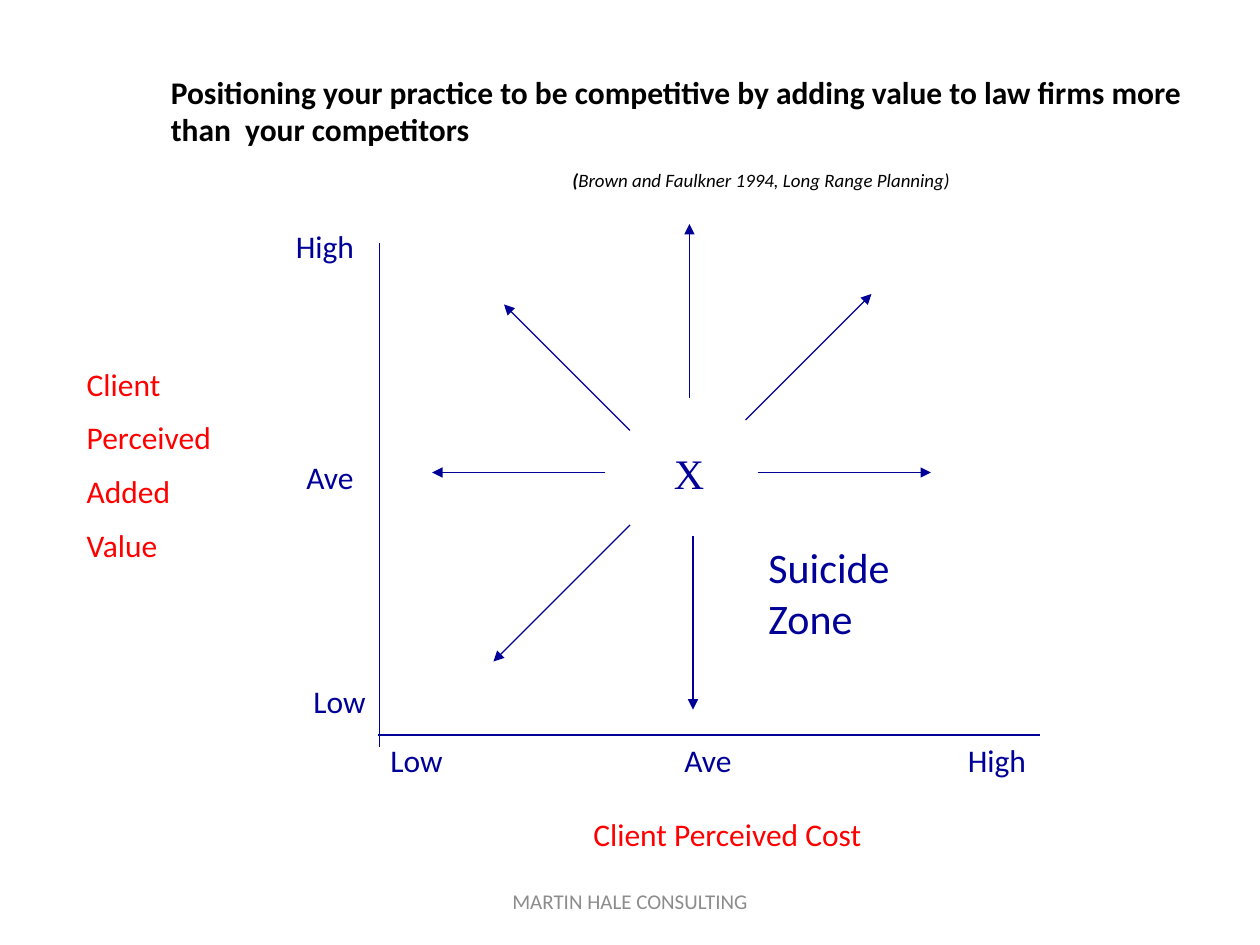
import pptx
import pptx.util
import pptx.dml.color
import pptx.enum.shapes
import pptx.enum.text
import pptx.oxml.ns
import lxml.etree

Pt = pptx.util.Pt
RGB = pptx.dml.color.RGBColor
NAVY = RGB(0x00, 0x00, 0x99)
RED = RGB(0xFF, 0x00, 0x00)
BLACK = RGB(0x00, 0x00, 0x00)
GRAY = RGB(0x8C, 0x8C, 0x8C)

AXES = [(217, 139, 217, 427), (216, 420, 594, 420)]
ARROWS = [
    (396, 306, 396, 405.5),
    (433, 270, 532, 270),
    (394, 227.5, 394, 128),
    (346, 270, 247, 270),
    (360, 300, 282, 378),
    (360, 246, 288, 174),
    (426, 240, 498, 168),
]
MARKS = [
    ("High", 162, 126), ("Ave", 168, 258), ("Low", 172, 386),
    ("Low", 216, 420), ("Ave", 384, 420), ("High", 546, 420),
]


def add_text(slide, text, left, top, width, height, color=NAVY, size=18,
             font="Calibri", bold=False):
    """Add a text box, one paragraph per line of text."""
    box = slide.shapes.add_textbox(Pt(left), Pt(top), Pt(width), Pt(height))
    frame = box.text_frame
    frame.word_wrap = True
    frame.text = text
    for i, para in enumerate(frame.paragraphs):
        if i:
            para.space_before = Pt(9)
        for run in para.runs:
            style(run, color, size, font, bold)
    return frame


def style(run, color, size, font, bold):
    run.font.color.rgb = color
    run.font.size = Pt(size)
    run.font.name = font
    run.font.bold = bold


def add_line(slide, ends, arrow=False):
    line = slide.shapes.add_connector(
        pptx.enum.shapes.MSO_CONNECTOR.STRAIGHT, *map(Pt, ends))
    line.line.color.rgb = NAVY
    line.line.width = Pt(0.75)
    if arrow:
        lxml.etree.SubElement(line.line._get_or_add_ln(),
                              pptx.oxml.ns.qn("a:tailEnd"), type="triangle")
    lxml.etree.SubElement(line._element.spPr,
                          pptx.oxml.ns.qn("a:effectLst"))


def add_head(slide):
    """Add the title and the citation under it."""
    add_text(slide, "Positioning your practice to be competitive by adding "
             "value to law firms more than  your competitors",
             90.5, 38, 613.5, 52, BLACK, bold=True)
    cite = add_text(slide, "(", 320, 93, 260, 21, BLACK, 10.8, bold=True)
    para = cite.paragraphs[0]
    rest = para.add_run()
    rest.text = "Brown and Faulkner 1994, Long Range Planning)"
    style(rest, BLACK, 10.8, "Calibri", False)
    for run in para.runs:
        run.font.italic = True


def add_foot(slide):
    foot = add_text(slide, "MARTIN HALE CONSULTING", 246, 500.5, 228, 29,
                    GRAY, 12)
    foot.vertical_anchor = pptx.enum.text.MSO_ANCHOR.MIDDLE
    foot.paragraphs[0].alignment = pptx.enum.text.PP_ALIGN.CENTER


def main():
    deck = pptx.Presentation()
    deck.slide_width, deck.slide_height = Pt(720), Pt(540)
    slide = deck.slides.add_slide(deck.slide_layouts[6])
    add_head(slide)
    for ends in AXES:
        add_line(slide, ends)
    add_text(slide, "Client\nPerceived\nAdded\nValue", 42.5, 205, 304, 127.5,
             RED)
    add_text(slide, "Client Perceived Cost", 332, 462, 209.5, 29, RED)
    for text, left, top in MARKS:
        add_text(slide, text, left, top, 72, 31)
    for ends in ARROWS:
        add_line(slide, ends, arrow=True)
    add_text(slide, "X", 378, 252, 30, 36, size=24, font="Times New Roman")
    add_text(slide, "Suicide Zone", 432, 306, 102, 65, size=24)
    add_foot(slide)
    deck.save("out.pptx")


if __name__ == "__main__":
    main()
